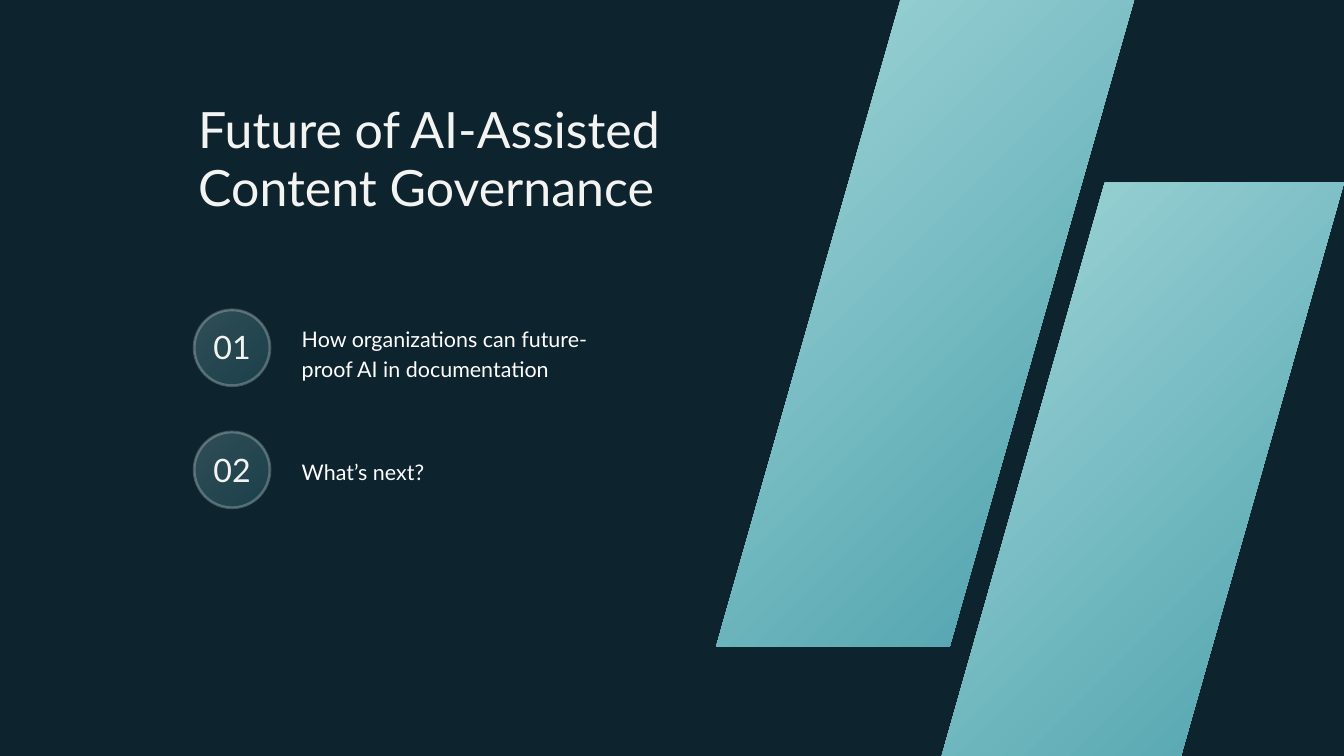
from lxml import etree
from pptx import Presentation
from pptx.dml.color import RGBColor
from pptx.enum.shapes import MSO_SHAPE
from pptx.enum.text import MSO_ANCHOR, MSO_AUTO_SIZE, PP_ALIGN
from pptx.oxml.ns import qn
from pptx.util import Pt

OVAL, SLANT = MSO_SHAPE.OVAL, MSO_SHAPE.PARALLELOGRAM
TOP, MIDDLE = MSO_ANCHOR.TOP, MSO_ANCHOR.MIDDLE
LEFT, CENTER = PP_ALIGN.LEFT, PP_ALIGN.CENTER
NO_FIT = MSO_AUTO_SIZE.NONE


def color(value):
    return RGBColor.from_string(value)


class SlideBuilder:
    font = "Lato"
    background = "0D232D"
    gradient = ("A3D7D8", "489EAB")
    off_white, white = "F3F3F2", "FFFFFF"

    def __init__(self, page):
        self.page = page
        fill = page.background.fill
        fill.solid()
        fill.fore_color.rgb = color(self.background)

    def set_text(self, shape, lines, size, spacing, tint, anchor=TOP, align=LEFT, gap=0):
        frame = shape.text_frame
        frame.text = "\n".join(lines)
        frame.word_wrap = True
        frame.auto_size = NO_FIT
        frame.vertical_anchor = anchor
        frame.margin_left = frame.margin_right = 0
        frame.margin_top = frame.margin_bottom = 0
        for index, para in enumerate(frame.paragraphs):
            para.alignment = align
            para.line_spacing = Pt(spacing)
            para.space_before = Pt(gap if index else 0)
            for span in para.runs:
                span.font.name = self.font
                span.font.size = Pt(size)
                span.font.color.rgb = color(tint)

    def place(self, shape, left, top, width, height):
        shape.left, shape.top = Pt(left), Pt(top)
        shape.width, shape.height = Pt(width), Pt(height)

    def title(self, text, *bounds):
        shape = self.page.shapes.title
        self.place(shape, *bounds)
        self.set_text(shape, [text], 53.6, 62.1, self.off_white)

    def topics(self, lines, gap, *bounds):
        shape = self.page.placeholders[1]
        self.place(shape, *bounds)
        self.set_text(shape, lines, 23, 32.2, self.white, gap=gap)
        for para in shape.text_frame.paragraphs:
            properties = para._p.get_or_add_pPr()
            properties.set("marL", "0")
            properties.set("indent", "0")
            etree.SubElement(properties, qn("a:buNone"))

    def gradient_shape(self, kind, left, top, width, height):
        shape = self.page.shapes.add_shape(
            kind, Pt(left), Pt(top), Pt(width), Pt(height))
        shape.shadow.inherit = False
        shape.fill.gradient()
        shape.fill.gradient_angle = 315
        for stop, value, position in zip(
                shape.fill.gradient_stops, self.gradient, (0, 1)):
            stop.color.rgb = color(value)
            stop.position = position
        shape.line.fill.background()
        return shape

    def band(self, slant, *bounds):
        shape = self.gradient_shape(SLANT, *bounds)
        shape.adjustments[0] = slant / min(bounds[2:])

    def badge(self, text, left, top, size, opacity=24):
        shape = self.gradient_shape(OVAL, left, top, size, size)
        shape.line.color.rgb = color(self.white)
        shape.line.width = Pt(3)
        for tint in shape._element.spPr.iter(qn("a:srgbClr")):
            etree.SubElement(tint, qn("a:alpha"), val=str(opacity * 1000))
        self.set_text(shape, [text], 34.5, 40, self.off_white, MIDDLE, CENTER)


def main():
    deck = Presentation()
    deck.slide_width, deck.slide_height = Pt(1440), Pt(810)
    builder = SlideBuilder(deck.slides.add_slide(deck.slide_layouts[1]))

    # Slanted bands on the right
    builder.band(202, 767.3, -15.8, 452.2, 708.5)
    builder.band(190, 993.6, 195.8, 446.4, 668.2)

    # Heading
    builder.title("Future of AI-Assisted Content Governance", 212.4, 108, 689.8, 125.3)

    # Numbered topics
    topics = ["How organizations can future-proof AI in documentation", "What’s next?"]
    for index in range(len(topics)):
        builder.badge(f"{index + 1:02}", 208, 332 + 130.8 * index, 81.2)
    builder.topics(topics, 78.2, 323.3, 344.9, 360, 175)

    deck.save("out.pptx")


if __name__ == "__main__":
    main()
